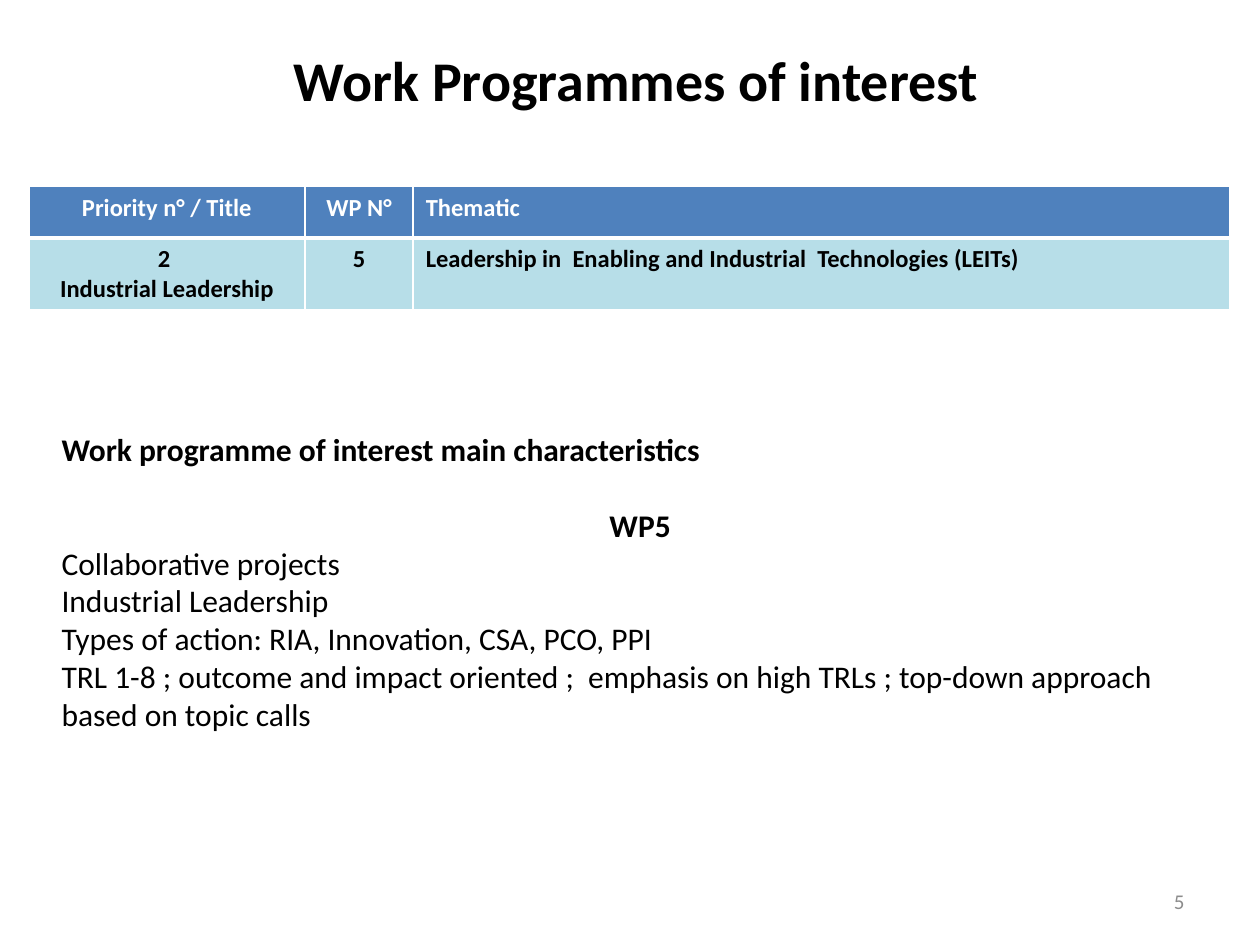
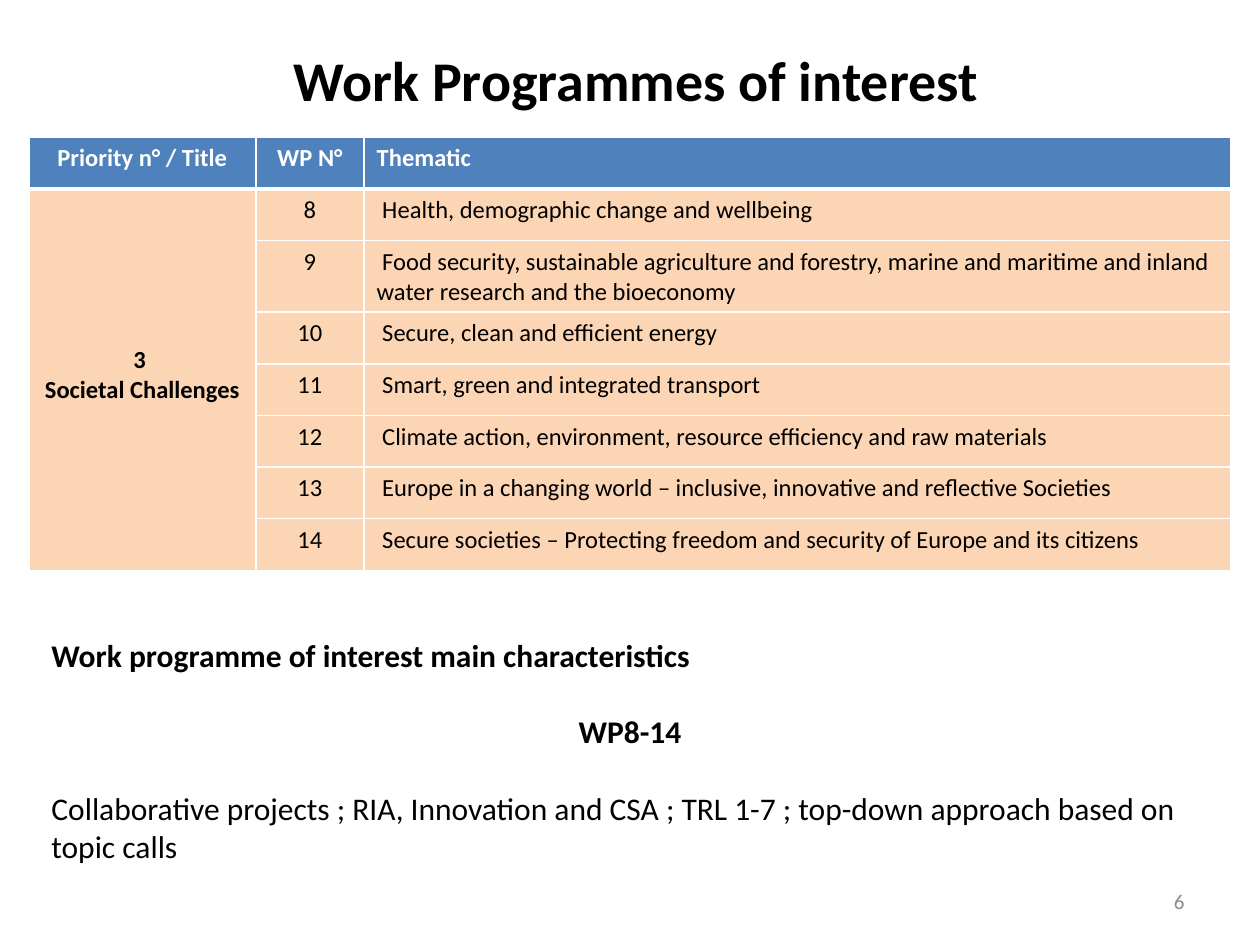
from lxml import etree
from pptx import Presentation
from pptx.dml.color import RGBColor
from pptx.enum import text
from pptx.oxml.ns import qn
from pptx.util import Inches, Pt

# Content
TITLE = "Work Programmes of interest"
HEADINGS = ("Priority n° / Title", "WP N°", "Thematic")
CHARACTERISTICS = "Work programme of interest main characteristics"

PRIORITIES = [
    {
        "page": "5",
        "priority": "2 \nIndustrial Leadership",
        "tint": RGBColor(0xB7, 0xDE, 0xE8),
        "programmes": [
            ("5", "Leadership in  Enabling and Industrial  Technologies (LEITs)"),
        ],
        "bold_programmes": True,
        "table_top": 1.48,
        "columns": (2.19, 0.86, 6.48),
        "priority_drop": 0.05,
        "summary_at": (0.39, 3.36, 9.38, 2.52),
        "summary_title": "WP5",
        "summary_gap": 0,
        "summary": [
            "Collaborative projects",
            "Industrial Leadership",
            "Types of action: RIA, Innovation, CSA, PCO, PPI",
            "TRL 1-8 ; outcome and impact oriented ;  emphasis on high TRLs ; "
            "top-down approach based on topic calls",
        ],
    },
    {
        "page": "6",
        "priority": "3 \nSocietal Challenges",
        "tint": RGBColor(0xFC, 0xD5, 0xB5),
        "programmes": [
            ("8", " Health, demographic change and wellbeing"),
            ("9", " Food security, sustainable agriculture and forestry, marine and "
                  "maritime and inland water research and the bioeconomy"),
            ("10", " Secure, clean and efficient energy"),
            ("11", " Smart, green and integrated transport"),
            ("12", " Climate action, environment, resource efficiency and raw materials"),
            ("13", " Europe in a changing world – inclusive, innovative and reflective Societies"),
            ("14", " Secure societies – Protecting freedom and security of Europe and its citizens"),
        ],
        "bold_programmes": False,
        "table_top": 1.09,
        "columns": (1.8, 0.86, 6.88),
        "priority_drop": 1.24,
        "summary_at": (0.31, 5, 9.38, 1.92),
        "summary_title": "WP8-14",
        "summary_gap": 22,
        "summary": [
            "Collaborative projects ; RIA, Innovation and CSA ; TRL 1-7 ; "
            "top-down approach based on topic calls",
        ],
    },
]

# Shared style
FONT = "Calibri"
BLACK = RGBColor(0, 0, 0)
WHITE = RGBColor(255, 255, 255)
GREY = RGBColor(0x8C, 0x8C, 0x8C)
HEADER_BLUE = RGBColor(0x4F, 0x81, 0xBD)
LEFT, CENTER, RIGHT = text.PP_ALIGN.LEFT, text.PP_ALIGN.CENTER, text.PP_ALIGN.RIGHT
COLUMN_ALIGN = (CENTER, CENTER, LEFT)
TITLE_AT = (0.55, 0, 9, 1.25)
PAGE_AT = (7.17, 6.95, 2.33, 0.4)
TABLE_LEFT = 0.23
ROW_HEIGHT = 0.41
BLANK_LINE = 22  # points, one line of 18 pt text


def style(paragraph, size, color=BLACK, bold=False, align=LEFT):
    paragraph.alignment = align
    for run in paragraph.runs:
        run.font.name = FONT
        run.font.size = Pt(size)
        run.font.bold = bold
        run.font.color.rgb = color


def add_text(slide, at, words, anchor=text.MSO_ANCHOR.TOP):
    frame = slide.shapes.add_textbox(*map(Inches, at)).text_frame
    frame.word_wrap = True
    frame.vertical_anchor = anchor
    frame.text = words
    return frame.paragraphs


def add_line(slide, at, words, **look):
    style(add_text(slide, at, words, text.MSO_ANCHOR.MIDDLE)[0], **look)


def set_borders(cell, top, bottom):
    properties = cell._tc.get_or_add_tcPr()
    for side, width in (("L", 1), ("R", 1), ("T", top), ("B", bottom)):
        line = etree.SubElement(properties, qn(f"a:ln{side}"), w=str(Pt(width)))
        fill = etree.SubElement(line, qn("a:solidFill"))
        etree.SubElement(fill, qn("a:srgbClr"), val=str(WHITE))


def add_programmes(slide, item):
    rows = [HEADINGS] + [("", *programme) for programme in item["programmes"]]
    rows[1] = (item["priority"], *rows[1][1:])
    columns = item["columns"]
    table = slide.shapes.add_table(
        len(rows), len(columns), Inches(TABLE_LEFT), Inches(item["table_top"]),
        Inches(sum(columns)), Inches(ROW_HEIGHT * len(rows))).table
    for column, width in zip(table.columns, columns):
        column.width = Inches(width)

    for r, row in enumerate(rows):
        table.rows[r].height = Inches(ROW_HEIGHT)
        for c, words in enumerate(row):
            cell = table.cell(r, c)
            # The rule under the header row is heavier than the others
            set_borders(cell, top=3 if r == 1 else 1, bottom=3 if r == 0 else 1)
            cell.fill.solid()
            cell.fill.fore_color.rgb = HEADER_BLUE if r == 0 else item["tint"]
            cell.text_frame.text = words
            for paragraph in cell.text_frame.paragraphs:
                style(paragraph, 14, WHITE if r == 0 else BLACK,
                      r == 0 or c == 0 or item["bold_programmes"], COLUMN_ALIGN[c])

    priority = table.cell(1, 0)
    priority.margin_top = Inches(item["priority_drop"])
    if len(rows) > 2:
        priority.merge(table.cell(len(rows) - 1, 0))


def add_summary(slide, item):
    words = "\n".join([CHARACTERISTICS, item["summary_title"], *item["summary"]])
    heading, subtitle, *points = add_text(slide, item["summary_at"], words)
    style(heading, 18, bold=True)
    style(subtitle, 18, bold=True, align=CENTER)
    subtitle.space_before = Pt(BLANK_LINE)
    subtitle.space_after = Pt(item["summary_gap"])
    for point in points:
        style(point, 18)


def main():
    deck = Presentation()
    deck.slide_width, deck.slide_height = Inches(10), Inches(7.5)
    for item in PRIORITIES:
        slide = deck.slides.add_slide(deck.slide_layouts[6])
        add_line(slide, TITLE_AT, TITLE, size=32, bold=True, align=CENTER)
        add_programmes(slide, item)
        add_summary(slide, item)
        add_line(slide, PAGE_AT, item["page"], size=12, color=GREY, align=RIGHT)
    deck.save("out.pptx")


if __name__ == "__main__":
    main()
